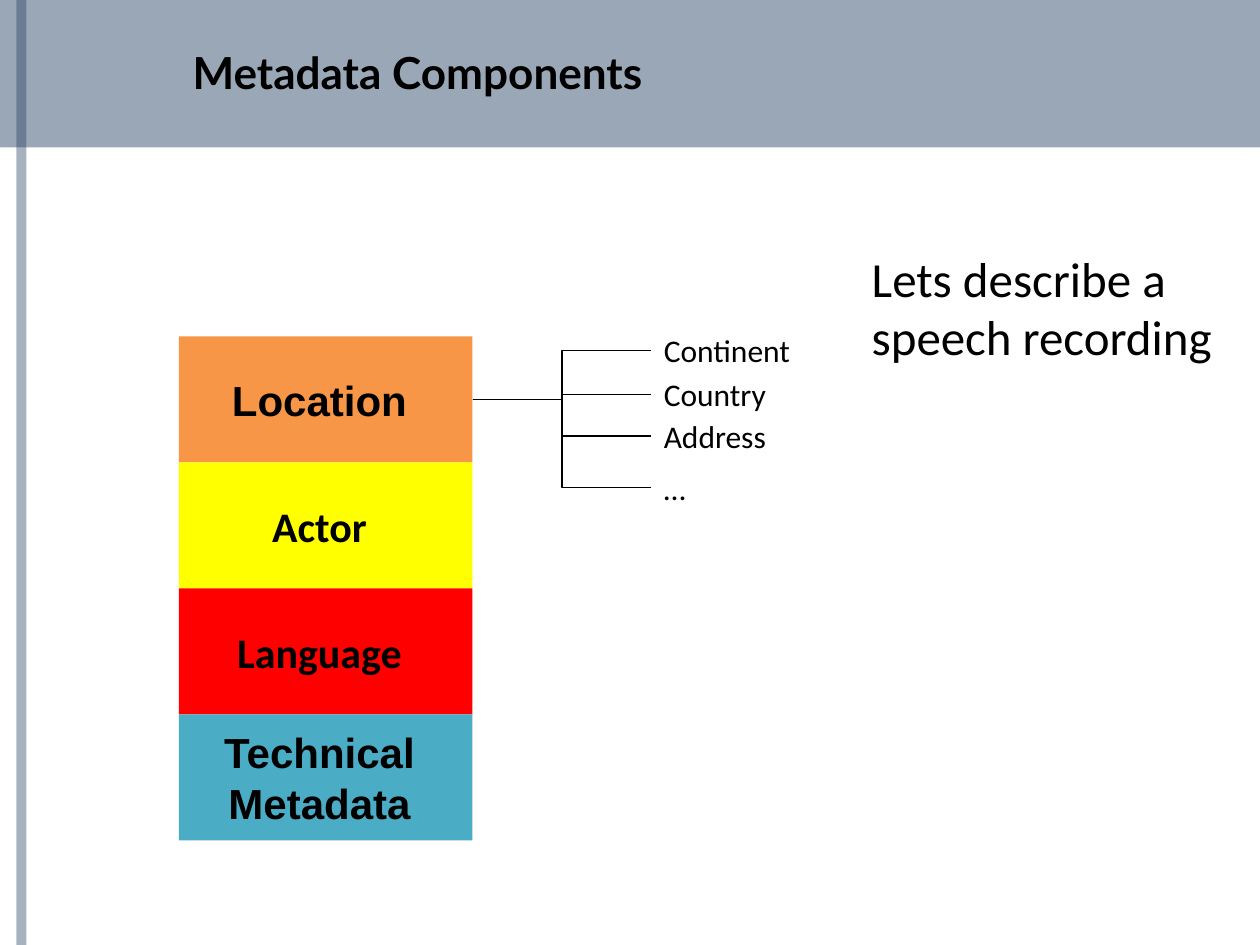
from lxml import etree
from pptx import Presentation
from pptx.dml.color import RGBColor
from pptx.enum import shapes, text
from pptx.oxml.ns import qn
from pptx.util import Inches, Pt

BLACK = RGBColor(0, 0, 0)
NAVY = RGBColor(0x25, 0x40, 0x61)
ORANGE = RGBColor(0xF7, 0x96, 0x46)
YELLOW = RGBColor(0xFF, 0xFF, 0x00)
RED = RGBColor(0xFF, 0x00, 0x00)
TEAL = RGBColor(0x4B, 0xAC, 0xC6)

# left, top, width, height, opacity in percent
BANDS = [(0, 0, 10, 1.17, 46), (0.13, 0, 0.08, 7.5, 40)]
TITLE = "Metadata Components"
NOTE = ["Lets describe a", "speech recording"]
COMPONENTS = [
    (["Location"], "Arial", ORANGE),
    (["Actor"], "Calibri", YELLOW),
    (["Language"], "Calibri", RED),
    (["Technical", "Metadata"], "Arial", TEAL),
]
# label, top, width
FIELDS = [
    ("Continent", 2.58, 1.28),
    ("Country", 2.93, 1.09),
    ("Address", 3.26, 1.14),
    ("…", 3.67, 0.45),
]
STACK_LEFT, STACK_TOP, BOX_W, BOX_H = 1.42, 2.67, 2.33, 1
FIELD_LEFT, FIELD_H = 5.17, 0.4


def write(tf, lines, font, size, bold=False, align=None):
    for i, line in enumerate(lines):
        p = tf.paragraphs[0] if i == 0 else tf.add_paragraph()
        p.alignment = align
        r = p.add_run()
        r.text = line
        r.font.name, r.font.size, r.font.bold = font, Pt(size), bold
        r.font.color.rgb = BLACK


def add_rect(s, left, top, width, height, color):
    sp = s.shapes.add_shape(shapes.MSO_SHAPE.RECTANGLE, Inches(left), Inches(top),
                            Inches(width), Inches(height))
    sp.shadow.inherit = False
    sp.fill.solid()
    sp.fill.fore_color.rgb = color
    sp.line.fill.background()
    return sp


def add_text(s, left, top, width, height, lines, font, size, bold=False, wrap=False):
    tf = s.shapes.add_textbox(Inches(left), Inches(top),
                              Inches(width), Inches(height)).text_frame
    tf.word_wrap = wrap
    write(tf, lines, font, size, bold)
    return tf


def add_elbow(s, x1, y1, x2, y2):
    c = s.shapes.add_connector(shapes.MSO_CONNECTOR.ELBOW, Inches(x1), Inches(y1),
                               Inches(x2), Inches(y2))
    c.line.color.rgb = BLACK
    c.line.width = Pt(0.75)
    etree.SubElement(c._element.spPr, qn("a:effectLst"))


def main():
    prs = Presentation()
    prs.slide_width, prs.slide_height = Inches(10), Inches(7.5)
    s = prs.slides.add_slide(prs.slide_layouts[6])

    for *place, opacity in BANDS:
        sp = add_rect(s, *place, NAVY)
        color = sp._element.spPr.find(qn("a:solidFill"))[0]
        etree.SubElement(color, qn("a:alpha"), val=str(opacity * 1000))

    title = add_text(s, 1.43, 0.3, 7.01, 0.54, [TITLE], "Lato", 25.2, True, True)
    title.vertical_anchor = text.MSO_ANCHOR.MIDDLE

    for i, (lines, font, color) in enumerate(COMPONENTS):
        tf = add_rect(s, STACK_LEFT, STACK_TOP + i * BOX_H, BOX_W, BOX_H, color).text_frame
        tf.margin_left = 0
        tf.vertical_anchor = text.MSO_ANCHOR.MIDDLE
        write(tf, lines, font, 24, True, text.PP_ALIGN.CENTER)

    for label, top, width in FIELDS:
        add_text(s, FIELD_LEFT, top, width, FIELD_H, [label], "Calibri", 18)
        add_elbow(s, STACK_LEFT + BOX_W, STACK_TOP + BOX_H / 2,
                  FIELD_LEFT, top + FIELD_H / 2)

    add_text(s, 6.82, 1.92, 3.21, 1.04, NOTE, "Calibri", 28)
    prs.save("out.pptx")


if __name__ == "__main__":
    main()
